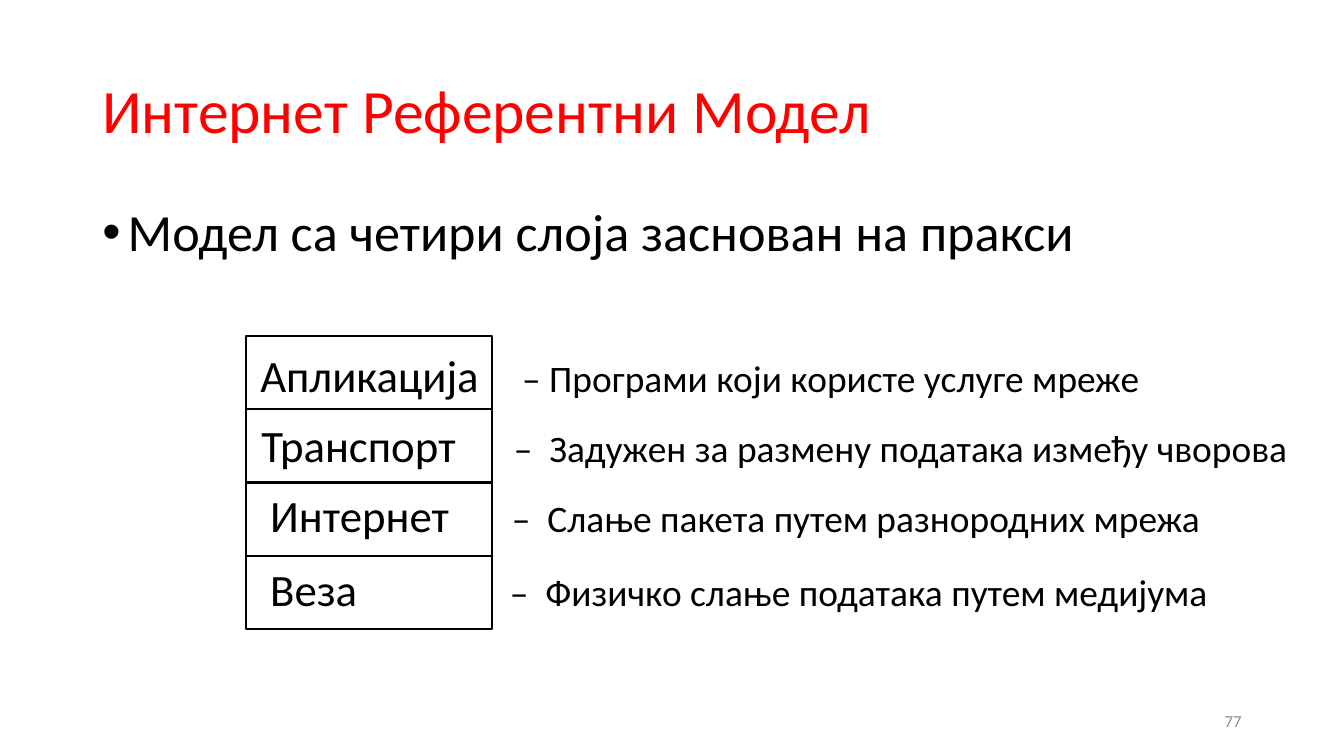
"""Builds the slide on the four-layer Internet reference model."""
from lxml.etree import SubElement
from pptx import Presentation
from pptx.dml.color import RGBColor
from pptx.enum.shapes import MSO_SHAPE
from pptx.enum.text import MSO_ANCHOR, PP_ALIGN
from pptx.oxml.ns import qn
from pptx.util import Cm, Pt

COLORS = {"title": "FF0000", "text": "000000", "number": "8C8C8C"}
LAYERS = [
    ("Апликација", "– Програми који користе услуге мреже", 8.64, 6.56, 13.16),
    ("Транспорт", "–  Задужен за размену података између чворова", 10.41, 6.59, 12.95),
    ("Интернет", "–  Слање пакета путем разнородних мрежа", 12.17, 6.81, 12.9),
    ("Веза", "–  Физичко слање података путем медијума", 14.02, 6.81, 12.85),
]
STACK_LEFT, STACK_TOP, LAYER_WIDTH, LAYER_HEIGHT = 6.2, 8.46, 6.2, 1.85
ROW_LEFT, ROW_WIDTH, ROW_HEIGHT = 4.52, 28.5, 1.63


class ModelSlide:
    def __init__(self, slide, font="Calibri"):
        self.slide = slide
        self.font = font

    def text(self, box, runs, color="text", anchor=MSO_ANCHOR.TOP, align=PP_ALIGN.LEFT):
        frame = self.slide.shapes.add_textbox(*map(Cm, box)).text_frame
        frame.word_wrap = True
        frame.vertical_anchor = anchor
        paragraph = frame.paragraphs[0]
        paragraph.alignment = align
        for words, size in runs:
            run = paragraph.add_run()
            run.text = words
            run.font.name = self.font
            run.font.size = Pt(size)
            run.font.color.rgb = RGBColor.from_string(COLORS[color])
        return frame

    def title(self, box, words):
        heading = self.text(box, [(words, 44)], "title", MSO_ANCHOR.MIDDLE)
        heading.paragraphs[0].line_spacing = 0.9

    def bullet(self, box, words):
        statement = self.text(box, [(words, 37.3)]).paragraphs[0]
        statement.line_spacing = 0.9
        statement.space_before = Pt(10)
        properties = statement._p.get_or_add_pPr()
        properties.set("marL", str(Cm(0.64)))
        properties.set("indent", str(-Cm(0.64)))
        SubElement(properties, qn("a:buFont"), typeface="Arial")
        SubElement(properties, qn("a:buChar"), char="•")

    def layer_text(self, name, role, top, name_left, role_left):
        row = self.text(
            (ROW_LEFT, top, ROW_WIDTH, ROW_HEIGHT), [(name + "\t", 32), (role, 26.7)]
        )
        row.margin_left = Cm(name_left - ROW_LEFT)
        stops = SubElement(row.paragraphs[0]._p.get_or_add_pPr(), qn("a:tabLst"))
        SubElement(stops, qn("a:tab"), pos=str(Cm(role_left - name_left)), algn="l")

    def layer_frame(self, index):
        top = STACK_TOP + index * LAYER_HEIGHT
        frame = self.slide.shapes.add_shape(
            MSO_SHAPE.RECTANGLE, *map(Cm, (STACK_LEFT, top, LAYER_WIDTH, LAYER_HEIGHT))
        )
        frame.shadow.inherit = False
        frame.fill.background()
        frame.line.color.rgb = RGBColor.from_string(COLORS["text"])
        frame.line.width = Pt(1.5)


def main():
    presentation = Presentation()
    presentation.slide_width = Cm(33.87)
    presentation.slide_height = Cm(19.05)
    model = ModelSlide(presentation.slides.add_slide(presentation.slide_layouts[6]))
    model.title((2.33, 1.01, 29.21, 3.68), "Интернет Референтни Модел")
    model.bullet((2.33, 5.07, 29.21, 12.09), "Модел са четири слоја заснован на пракси")
    model.text((23.92, 17.66, 7.62, 1.01), [("77", 12)], "number", MSO_ANCHOR.MIDDLE, PP_ALIGN.RIGHT)
    for layer in LAYERS:
        model.layer_text(*layer)
    for index in range(len(LAYERS)):
        model.layer_frame(index)
    presentation.save("out.pptx")


if __name__ == "__main__":
    main()
